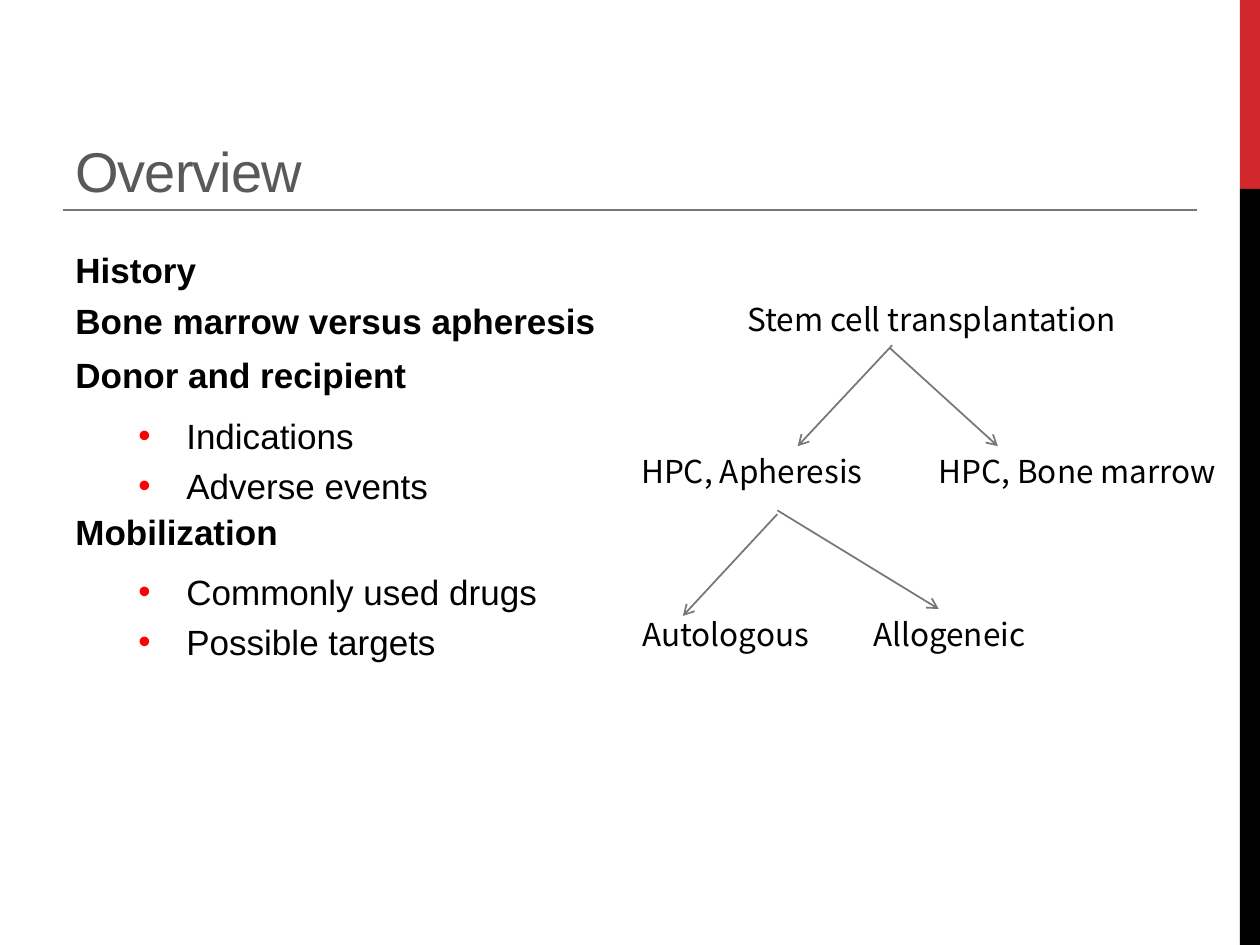
from lxml import etree
from pptx import Presentation
from pptx.dml.color import RGBColor
from pptx.enum import shapes as kinds, text as modes
from pptx.oxml import ns
from pptx.util import Pt

RED = RGBColor(0xD1, 0x28, 0x2E)
BLACK = RGBColor(0, 0, 0)
SLATE = RGBColor(0x59, 0x59, 0x59)
GRAY = RGBColor(0x77, 0x77, 0x77)
SANS = "Arial"
NOTO = "Noto Sans CJK KR"

TOPICS = [
    (138.2, "History", []),
    (167.8, "Bone marrow versus apheresis", []),
    (198.7, "Donor and recipient", ["Indications", "Adverse events"]),
    (288, "Mobilization", ["Commonly used drugs", "Possible targets"]),
]
LABELS = [
    (60, 0, 246, "Stem cell transplantation"),
    (-0.7, 87, 246, "HPC, Apheresis"),
    (169.2, 87, 187, "HPC, Bone marrow"),
    (0, 180, 133, "Autologous"),
    (131.8, 180, 133, "Allogeneic"),
]
ARROWS = [
    (149.8, 29.3, 95.8, 87),
    (148.3, 30.7, 210.2, 87),
    (84.2, 125.8, 30.2, 184),
    (84.2, 123.6, 176.4, 180),
]


def add_tag(node, tag, **attrs):
    return etree.SubElement(node, ns.qn(tag), attrs)


def style(para, font, size, color, bold=False):
    for run in para.runs:
        run.font.name = font
        run.font.size = Pt(size)
        run.font.color.rgb = color
        run.font.bold = bold


def add_text(slide, x, y, w, h, words):
    frame = slide.shapes.add_textbox(Pt(x), Pt(y), Pt(w), Pt(h)).text_frame
    frame.word_wrap = True
    frame.text = words
    return frame


def add_line(slide, x, y, x2, y2, arrow=False):
    line = slide.shapes.add_connector(
        kinds.MSO_CONNECTOR.STRAIGHT, Pt(x), Pt(y), Pt(x2), Pt(y2))
    line.line.color.rgb = GRAY
    line.line.width = Pt(1)
    props = line.line._get_or_add_ln()
    if arrow:
        add_tag(props, "a:tailEnd", type="arrow")
    add_tag(props.getparent(), "a:effectLst")


def add_bar(slide, x, y, w, h):
    split = h / 5
    for top, high, color in ((y, split, RED), (y + split, h - split, BLACK)):
        part = slide.shapes.add_shape(
            kinds.MSO_SHAPE.RECTANGLE, Pt(x), Pt(top), Pt(w), Pt(high))
        part.shadow.inherit = False
        part.fill.solid()
        part.fill.fore_color.rgb = color
        part.line.fill.background()


def add_title(slide, x, y, w, h):
    frame = add_text(slide, x, y, 558, h, "Overview")
    frame.vertical_anchor = modes.MSO_ANCHOR.BOTTOM
    para = frame.paragraphs[0]
    style(para, SANS, 32, SLATE)
    para.runs[0].font._element.set("spc", "-60")
    add_line(slide, x, y + h, x + w, y + h)


def add_bullet(para):
    props = para._p.get_or_add_pPr()
    props.set("marL", str(Pt(63.4)))
    props.set("indent", str(Pt(-27.4)))
    add_tag(add_tag(props, "a:buClr"), "a:srgbClr", val="FF0000")
    add_tag(props, "a:buFont", typeface=SANS)
    add_tag(props, "a:buChar", char="•")


def add_topic(slide, x, y, w, head, items):
    high = 45 + 28 * len(items)
    frame = add_text(slide, x, y, w, high, "\n".join([head] + items))
    for i, para in enumerate(frame.paragraphs):
        para.space_before = Pt(4.6)
        para.space_after = Pt(0 if i else 6)
        style(para, SANS, 20, BLACK, bold=i == 0)
        if i:
            para.level = 1
            add_bullet(para)


def add_tree(slide, x, y):
    for dx, dy, w, words in LABELS:
        frame = add_text(slide, x + dx, y + dy, w, 28.8, words)
        frame.auto_size = modes.MSO_AUTO_SIZE.SHAPE_TO_FIT_TEXT
        style(frame.paragraphs[0], NOTO, 18, BLACK)
    for x1, y1, x2, y2 in ARROWS:
        add_line(slide, x + x1, y + y1, x + x2, y + y2, arrow=True)


def main():
    deck = Presentation()
    deck.slide_width, deck.slide_height = Pt(720), Pt(540)
    slide = deck.slides.add_slide(deck.slide_layouts[6])
    add_bar(slide, 708.5, 0, 11.5, 540)
    add_title(slide, 36, 12, 648, 108)
    for y, head, items in TOPICS:
        add_topic(slide, 36, y, 318, head, items)
    add_tree(slide, 360, 168)
    deck.save("out.pptx")


if __name__ == "__main__":
    main()
